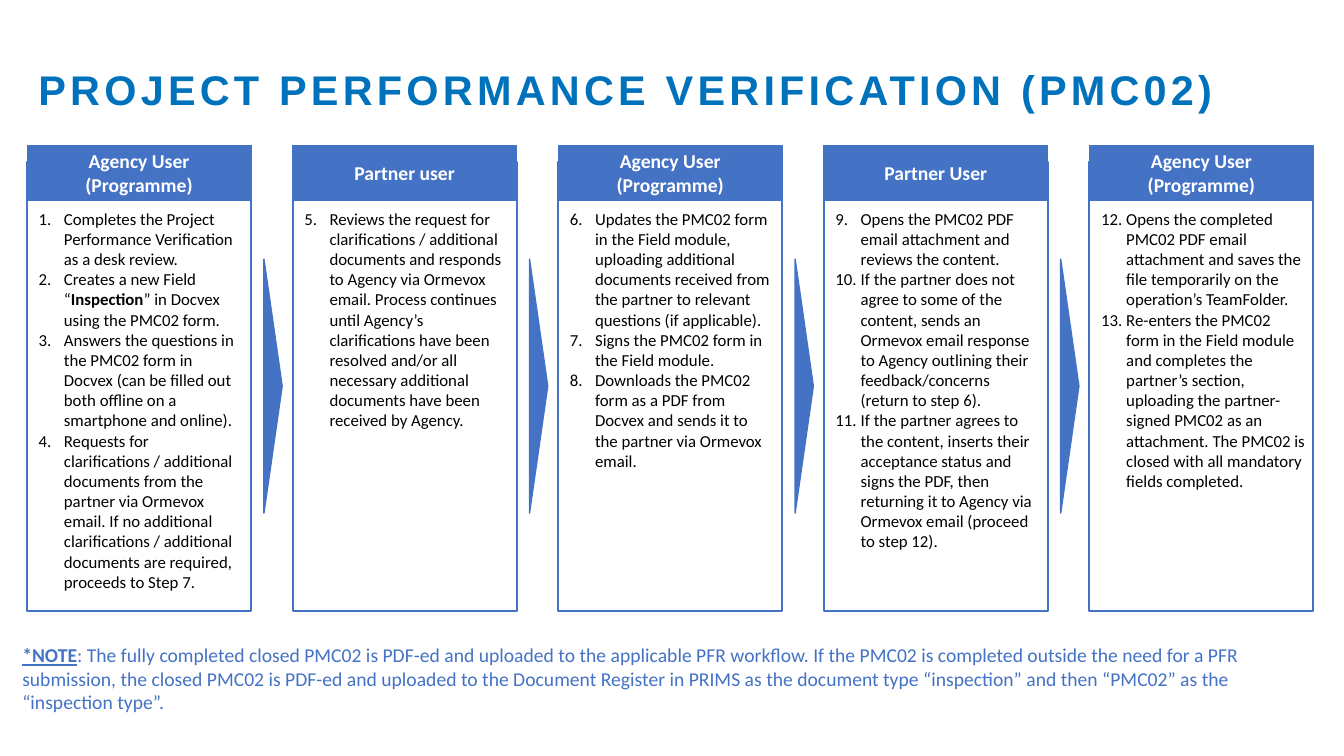
from dataclasses import dataclass

from lxml import etree
from pptx import Presentation
from pptx.dml.color import RGBColor
from pptx.enum.shapes import MSO_SHAPE
from pptx.enum.text import MSO_ANCHOR, MSO_AUTO_SIZE, PP_ALIGN
from pptx.oxml.ns import qn
from pptx.util import Pt

RECTANGLE, TRIANGLE = MSO_SHAPE.RECTANGLE, MSO_SHAPE.ISOSCELES_TRIANGLE
TOP, MIDDLE = MSO_ANCHOR.TOP, MSO_ANCHOR.MIDDLE
LEFT, CENTER = PP_ALIGN.LEFT, PP_ALIGN.CENTER
NO_AUTOFIT = MSO_AUTO_SIZE.NONE

# Text between bars is emphasised.
TITLE = "PROJECT PERFORMANCE VERIFICATION (PMC02)"
STAGES = [
    ("Agency User (Programme)", [
        "Completes the Project Performance Verification as a desk review.",
        "Creates a new Field “|Inspection|” in Docvex using the PMC02 form.",
        "Answers the questions in the PMC02 form in Docvex (can be filled out both "
        "offline on a smartphone and online).",
        "Requests for clarifications / additional documents from the partner via "
        "Ormevox email. If no additional clarifications / additional documents are "
        "required, proceeds to Step 7.",
    ]),
    ("Partner user", [
        "Reviews the request for clarifications / additional documents and responds "
        "to Agency via Ormevox email. Process continues until Agency’s clarifications "
        "have been resolved and/or all necessary additional documents have been "
        "received by Agency.",
    ]),
    ("Agency User (Programme)", [
        "Updates the PMC02 form in the Field module, uploading additional documents "
        "received from the partner to relevant questions (if applicable).",
        "Signs the PMC02 form in the Field module.",
        "Downloads the PMC02 form as a PDF from Docvex and sends it to the partner "
        "via Ormevox email.",
    ]),
    ("Partner User", [
        "Opens the PMC02 PDF email attachment and reviews the content.",
        "If the partner does not agree to some of the content, sends an Ormevox email "
        "response to Agency outlining their feedback/concerns (return to step 6).",
        "If the partner agrees to the content, inserts their acceptance status and "
        "signs the PDF, then returning it to Agency via Ormevox email (proceed to "
        "step 12).",
    ]),
    ("Agency User (Programme)", [
        "Opens the completed PMC02 PDF email attachment and saves the file "
        "temporarily on the operation’s TeamFolder.",
        "Re-enters the PMC02 form in the Field module and completes the partner’s "
        "section, uploading the partner-signed PMC02 as an attachment. The PMC02 is "
        "closed with all mandatory fields completed.",
    ]),
]
NOTE = (
    "|*NOTE|: The fully completed closed PMC02 is PDF-ed and uploaded to the "
    "applicable PFR workflow. If the PMC02 is completed outside the need for a PFR "
    "submission, the closed PMC02 is PDF-ed and uploaded to the Document Register in "
    "PRIMS as the document type “inspection” and then “PMC02” as the “inspection type”."
)


@dataclass(frozen=True)
class Theme:
    title_color: RGBColor = RGBColor(0x00, 0x72, 0xBC)
    accent: RGBColor = RGBColor(0x44, 0x72, 0xC4)
    ink: RGBColor = RGBColor(0, 0, 0)
    white: RGBColor = RGBColor(255, 255, 255)
    title_font: str = "Arial"
    body_font: str = "Calibri"
    title_size: float = 29.6
    header_size: float = 14
    step_size: float = 12
    note_size: float = 14


THEME = Theme()

COLUMN_LEFT, COLUMN_WIDTH, COLUMN_PITCH = 19.4, 160, 189.7
FRAME_TOP, FRAME_HEIGHT = 116, 320.5
HEADER_TOP, HEADER_HEIGHT = 103.7, 39.6
STEPS_TOP, STEPS_HEIGHT, STEP_INDENT = 145.4, 290, 18
ARROW_LENGTH, ARROW_DEPTH, ARROW_MIDDLE = 181.4, 13, 275.8


def place(shape, left, top, width, height):
    shape.left, shape.top = Pt(left), Pt(top)
    shape.width, shape.height = Pt(width), Pt(height)


def add_panel(slide, kind, box, fill=None, line_width=1):
    panel = slide.shapes.add_shape(kind, *map(Pt, box))
    panel.shadow.inherit = False
    if fill is None:
        panel.fill.background()
    else:
        panel.fill.solid()
        panel.fill.fore_color.rgb = fill
    panel.line.color.rgb = THEME.accent
    panel.line.width = Pt(line_width)
    return panel


def add_text_area(slide, box):
    frame = slide.shapes.add_textbox(*map(Pt, box)).text_frame
    frame.word_wrap = True
    return frame


def style(run, size, color, bold=False, font=THEME.body_font):
    run.font.name, run.font.size, run.font.bold = font, Pt(size), bold
    run.font.color.rgb = color


def write_marked(paragraph, text, size, color):
    """Write text whose parts between bars are bold."""
    for index, part in enumerate(text.split("|")):
        if part:
            run = paragraph.add_run()
            run.text = part
            style(run, size, color, bold=index % 2 == 1)


def number(paragraph, start):
    """Give the paragraph a hanging automatic number."""
    properties = paragraph._p.get_or_add_pPr()
    properties.set("marL", str(Pt(STEP_INDENT)))
    properties.set("indent", str(-Pt(STEP_INDENT)))
    etree.SubElement(properties, qn("a:buFont"), typeface="+mj-lt")
    etree.SubElement(properties, qn("a:buAutoNum"), type="arabicPeriod", startAt=str(start))


def add_title(slide):
    title = slide.shapes.title
    place(title, 20.2, 38.9, 898, 43.2)
    frame = title.text_frame
    frame.text = TITLE
    frame.auto_size, frame.vertical_anchor = NO_AUTOFIT, TOP
    paragraph = frame.paragraphs[0]
    paragraph.alignment, paragraph.line_spacing = LEFT, 1.1
    run = paragraph.runs[0]
    style(run, THEME.title_size, THEME.title_color, True, THEME.title_font)
    run.font._rPr.set("spc", "300")


def add_stage(slide, left, role, steps, first_number):
    add_panel(slide, RECTANGLE, (left, FRAME_TOP, COLUMN_WIDTH, FRAME_HEIGHT), line_width=1.5)
    header = add_panel(slide, RECTANGLE, (left, HEADER_TOP, COLUMN_WIDTH, HEADER_HEIGHT),
                       THEME.accent, 0.75).text_frame
    header.text = role
    header.vertical_anchor = MIDDLE
    header.paragraphs[0].alignment = CENTER
    style(header.paragraphs[0].runs[0], THEME.header_size, THEME.white, True)

    area = add_text_area(slide, (left + 1.2, STEPS_TOP, COLUMN_WIDTH, STEPS_HEIGHT))
    for index, step in enumerate(steps):
        paragraph = area.add_paragraph() if index else area.paragraphs[0]
        number(paragraph, first_number)
        write_marked(paragraph, step, THEME.step_size, THEME.ink)


def add_arrow(slide, center):
    box = (center - ARROW_LENGTH / 2, ARROW_MIDDLE - ARROW_DEPTH / 2, ARROW_LENGTH, ARROW_DEPTH)
    add_panel(slide, TRIANGLE, box, THEME.accent).rotation = 90


def add_note(slide):
    note = add_text_area(slide, (13, 456.5, 926, 56.9))
    note.margin_left = note.margin_right = note.margin_top = note.margin_bottom = Pt(2.9)
    write_marked(note.paragraphs[0], NOTE, THEME.note_size, THEME.accent)
    note.paragraphs[0].runs[0].font.underline = True


def main():
    deck = Presentation()
    deck.slide_width, deck.slide_height = Pt(960), Pt(540)
    slide = deck.slides.add_slide(deck.slide_layouts[5])
    add_title(slide)
    first_number = 1
    for index, (role, steps) in enumerate(STAGES):
        left = COLUMN_LEFT + index * COLUMN_PITCH
        if index:
            add_arrow(slide, left - (COLUMN_PITCH - COLUMN_WIDTH) / 2 + 0.8)
        add_stage(slide, left, role, steps, first_number)
        first_number += len(steps)
    add_note(slide)
    deck.save("out.pptx")


if __name__ == "__main__":
    main()
